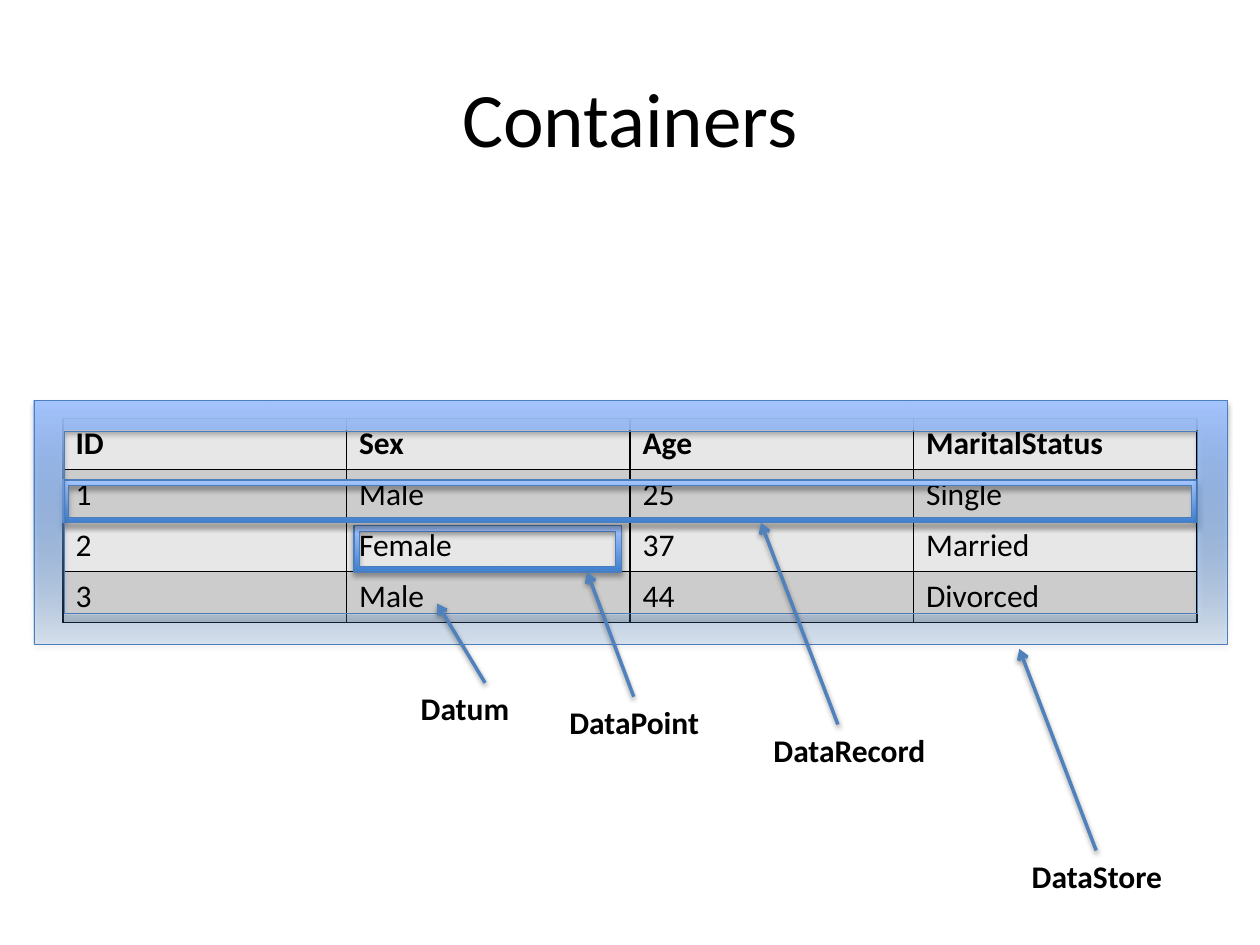
from lxml.etree import SubElement
from pptx import Presentation
from pptx.dml.color import RGBColor
from pptx.enum.shapes import MSO_CONNECTOR, MSO_SHAPE
from pptx.enum.text import MSO_ANCHOR, MSO_AUTO_SIZE, PP_ALIGN
from pptx.oxml.ns import qn
from pptx.util import Inches, Pt

BLACK = RGBColor(0x00, 0x00, 0x00)
LIGHT = RGBColor(0xE7, 0xE7, 0xE7)
GREY = RGBColor(0xCC, 0xCC, 0xCC)
ARROW = RGBColor(0x4F, 0x81, 0xBD)
EDGE = RGBColor(0x4B, 0x7E, 0xBC)
DEEP = RGBColor(0x3F, 0x80, 0xCE)
PALE = RGBColor(0xA4, 0xC4, 0xFF)


def node(parent, tag, **attrs):
    return SubElement(parent, qn(tag), {k: str(v) for k, v in attrs.items()})


class Deck:
    font = "Calibri"
    size = 18

    def __init__(self, slide):
        self.slide = slide

    def add_text(self, para, text, size=size, bold=False):
        run = para.add_run()
        run.text = text
        run.font.name = self.font
        run.font.size = Pt(size)
        run.font.bold = bold
        run.font.color.rgb = BLACK

    def shade(self, effects, alpha, dist):
        """Soft shadow that falls straight down."""
        shadow = node(effects, "a:outerShdw", blurRad=Pt(3.1), dist=Pt(dist),
                      dir=90 * 60000, rotWithShape=0)
        color = node(shadow, "a:srgbClr", val=BLACK)
        node(color, "a:alpha", val=alpha * 1000)

    def title(self, text, left, top, width, height):
        box = self.slide.shapes.add_textbox(
            Inches(left), Inches(top), Inches(width), Inches(height))
        frame = box.text_frame
        frame.word_wrap = True
        frame.vertical_anchor = MSO_ANCHOR.MIDDLE
        frame.paragraphs[0].alignment = PP_ALIGN.CENTER
        self.add_text(frame.paragraphs[0], text, size=44)

    def label(self, text, left, top, width):
        box = self.slide.shapes.add_textbox(
            Inches(left), Inches(top), Inches(width), Inches(0.4))
        box.text_frame.word_wrap = False
        box.text_frame.auto_size = MSO_AUTO_SIZE.SHAPE_TO_FIT_TEXT
        self.add_text(box.text_frame.paragraphs[0], text, bold=True)

    def table(self, rows, left, top, width, height):
        grid = self.slide.shapes.add_table(
            len(rows), len(rows[0]), Inches(left), Inches(top),
            Inches(width), Inches(height)).table
        for r, row in enumerate(rows):
            for c, text in enumerate(row):
                cell = grid.cell(r, c)
                self.add_text(cell.text_frame.paragraphs[0], text, bold=r == 0)
                self.border(cell)
                cell.fill.solid()
                cell.fill.fore_color.rgb = GREY if r % 2 else LIGHT

    def border(self, cell):
        props = cell._tc.get_or_add_tcPr()
        for side in ("a:lnL", "a:lnR", "a:lnT", "a:lnB"):
            fill = node(node(props, side, w=Pt(1)), "a:solidFill")
            node(fill, "a:srgbClr", val=BLACK)

    def frame(self, left, top, width, height, line=0.75, alpha=None):
        shape = self.slide.shapes.add_shape(
            MSO_SHAPE.FRAME, Inches(left), Inches(top),
            Inches(width), Inches(height))
        shape.fill.gradient()
        shape.fill.gradient_angle = 90
        for stop, color in zip(shape.fill.gradient_stops, (DEEP, PALE)):
            stop.color.rgb = color
        shape.line.color.rgb = EDGE
        shape.line.width = Pt(line)
        shape.shadow.inherit = False
        props = shape._element.spPr
        if alpha:
            node(props.find(".//" + qn("a:srgbClr")), "a:alpha",
                 val=alpha * 1000)
        self.shade(props.find(qn("a:effectLst")), 35, 1.8)

    def arrow(self, x1, y1, x2, y2):
        line = self.slide.shapes.add_connector(
            MSO_CONNECTOR.STRAIGHT, Inches(x1), Inches(y1),
            Inches(x2), Inches(y2))
        line.line.color.rgb = ARROW
        line.line.width = Pt(2)
        props = line._element.spPr
        node(props.find(qn("a:ln")), "a:tailEnd", type="arrow")
        self.shade(node(props, "a:effectLst"), 38, 1.6)


def main():
    show = Presentation()
    show.slide_width, show.slide_height = Inches(10), Inches(7.5)
    deck = Deck(show.slides.add_slide(show.slide_layouts[6]))

    # Title and data
    deck.title("Containers", 0.5, 0.3, 9, 1.25)
    deck.table([
        ("ID", "Sex", "Age", "MaritalStatus"),
        ("1", "Male", "25", "Single"),
        ("2", "Female", "37", "Married"),
        ("3", "Male", "44", "Divorced"),
    ], 0.5, 3.32, 9, 1.62)

    # Frames around a point, a record and the whole store
    deck.frame(2.81, 4.17, 2.12, 0.37)
    deck.frame(0.5, 3.81, 9, 0.34)
    deck.frame(0.27, 3.18, 9.47, 1.93, line=0.25, alpha=15)

    # Labels, each with an arrow to its container
    for text, left, top, width, tip_x, tip_y in (
        ("Datum", 3.24, 5.42, 0.91, 3.47, 4.79),
        ("DataPoint", 4.42, 5.53, 1.25, 4.66, 4.54),
        ("DataRecord", 6.04, 5.75, 1.43, 6.04, 4.15),
        ("DataStore", 8.09, 6.75, 1.26, 8.09, 5.15),
    ):
        deck.label(text, left, top, width)
        deck.arrow(left + 0.61, top, tip_x, tip_y)

    show.save("out.pptx")


if __name__ == "__main__":
    main()
